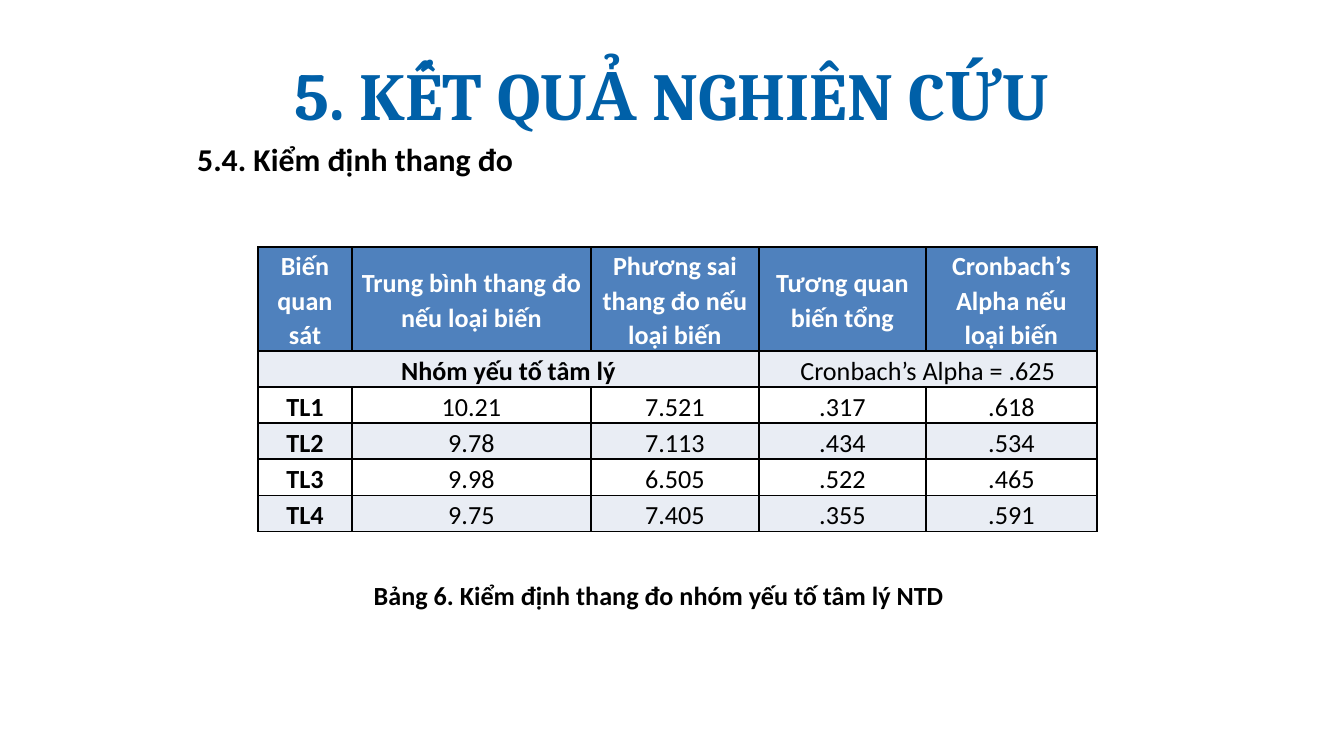
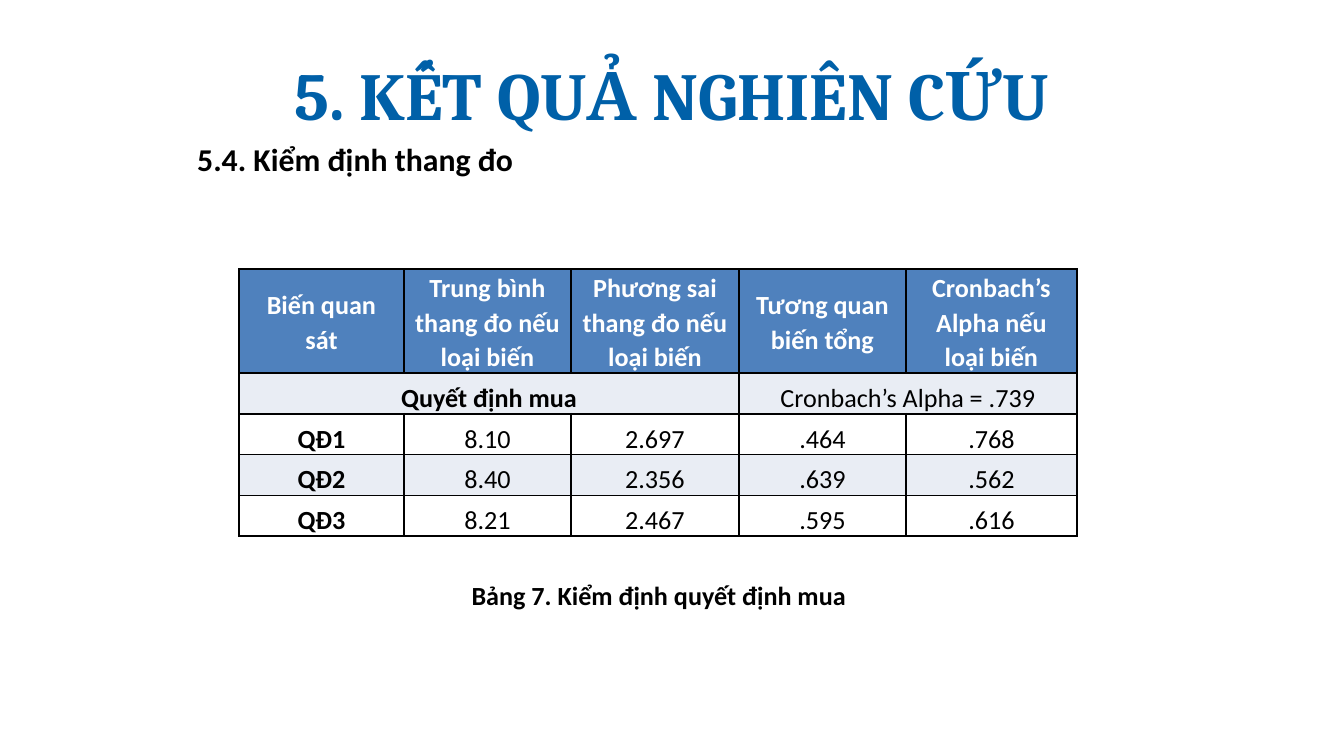
from lxml.etree import SubElement
from pptx import Presentation
from pptx.dml.color import RGBColor
from pptx.enum.text import MSO_ANCHOR, MSO_AUTO_SIZE, PP_ALIGN
from pptx.oxml.ns import qn
from pptx.util import Emu, Pt

SCALE = 914400 / 134.4
WIDE, HIGH = 1344, 756

BLUE = RGBColor(0x00, 0x60, 0xA8)
HEAD = RGBColor(0x4F, 0x81, 0xBD)
BAND = RGBColor(0xE9, 0xED, 0xF4)
WHITE = RGBColor(0xFF, 0xFF, 0xFF)
BLACK = RGBColor(0x00, 0x00, 0x00)

# Shared formats and wording
TITLE = {"name": "Cambria", "size": Pt(36), "bold": True}
SUB = {"name": "Calibri", "size": Pt(17), "bold": True}
BODY = {"name": "Calibri", "size": Pt(14), "bold": True}
HEADS = ["Biến quan sát", "Trung bình thang đo nếu loại biến",
         "Phương sai thang đo nếu loại biến", "Tương quan biến tổng",
         "Cronbach’s Alpha nếu loại biến"]

TABLES = [
    {"note": "Bảng 6. Kiểm định thang đo nhóm yếu tố tâm lý NTD",
     "left": 258, "top": 247, "cols": [94, 239, 168, 167, 171],
     "row": 36, "space": 1.15,
     "group": "Nhóm yếu tố tâm lý", "alpha": "Cronbach’s Alpha = .625",
     "data": [["TL1", "10.21", "7.521", ".317", ".618"],
              ["TL2", "9.78", "7.113", ".434", ".534"],
              ["TL3", "9.98", "6.505", ".522", ".465"],
              ["TL4", "9.75", "7.405", ".355", ".591"]]},
    {"note": "Bảng 7. Kiểm định quyết định mua",
     "left": 239, "top": 269, "cols": [165, 167, 168, 167, 171],
     "row": 40, "space": 1.3,
     "group": "Quyết định mua", "alpha": "Cronbach’s Alpha = .739",
     "data": [["QĐ1", "8.10", "2.697", ".464", ".768"],
              ["QĐ2", "8.40", "2.356", ".639", ".562"],
              ["QĐ3", "8.21", "2.467", ".595", ".616"]]},
]
HEAD_ROW = 104


def px(n):
    return Emu(round(n * SCALE))


def write(frame, text, style, color, align):
    para = frame.paragraphs[0]
    para.alignment = align
    run = para.add_run()
    run.text = text
    for key, value in style.items():
        setattr(run.font, key, value)
    run.font.color.rgb = color
    return para


def add_title(slide, text):
    shape = slide.shapes.title
    box = {"left": 67, "top": 31, "width": 1210, "height": 126}
    for key, value in box.items():
        setattr(shape, key, px(value))
    shape.text_frame.vertical_anchor = MSO_ANCHOR.MIDDLE
    write(shape.text_frame, text, TITLE, BLUE, PP_ALIGN.CENTER)


def add_label(slide, text, box, style, align):
    frame = slide.shapes.add_textbox(*map(px, box)).text_frame
    frame.word_wrap = True
    frame.auto_size = MSO_AUTO_SIZE.SHAPE_TO_FIT_TEXT
    write(frame, text, style, BLACK, align)


def add_edges(cell):
    props = cell._tc.get_or_add_tcPr()
    for side in ("lnL", "lnR", "lnT", "lnB"):
        line = SubElement(props, qn(f"a:{side}"), w=str(Pt(1)))
        fill = SubElement(line, qn("a:solidFill"))
        SubElement(fill, qn("a:srgbClr"), val=str(BLACK))


def fill_cell(cell, text, fill, color, bold, space):
    add_edges(cell)
    cell.fill.solid()
    cell.fill.fore_color.rgb = fill
    cell.vertical_anchor = MSO_ANCHOR.MIDDLE
    cell.margin_left = cell.margin_right = px(9)
    cell.margin_top = cell.margin_bottom = 0
    style = {**BODY, "bold": bold}
    if text:
        para = write(cell.text_frame, text, style, color, PP_ALIGN.CENTER)
    else:
        para = cell.text_frame.paragraphs[0]
        para.font.size = BODY["size"]
    para.line_spacing = space


def add_grid(slide, info):
    group = [info["group"], "", "", info["alpha"], ""]
    rows = [HEADS, group, *info["data"]]
    cols = info["cols"]
    highs = [HEAD_ROW] + [info["row"]] * (len(rows) - 1)
    box = info["left"], info["top"], sum(cols), sum(highs)
    table = slide.shapes.add_table(len(rows), len(cols), *map(px, box)).table
    table.first_row = table.horz_banding = False
    for col, width in zip(table.columns, cols):
        col.width = px(width)
    for row, high in zip(table.rows, highs):
        row.height = px(high)

    # Header, then light and white rows in turn
    for r, row in enumerate(rows):
        top = r == 0
        fill = HEAD if top else BAND if r % 2 else WHITE
        for c, text in enumerate(row):
            fill_cell(table.cell(r, c), text, fill, WHITE if top else BLACK,
                      top or c == 0, 1.1 if top else info["space"])

    # Group row: name over three columns, alpha over two
    for first, last in ((0, 2), (3, 4)):
        table.cell(1, first).merge(table.cell(1, last))


def main():
    deck = Presentation()
    deck.slide_width, deck.slide_height = px(WIDE), px(HIGH)
    for info in TABLES:
        slide = deck.slides.add_slide(deck.slide_layouts[5])
        add_title(slide, "5. KẾT QUẢ NGHIÊN CỨU")
        add_label(slide, "5.4. Kiểm định thang đo", (184, 133, 985, 52),
                  SUB, PP_ALIGN.LEFT)
        add_label(slide, info["note"], (323, 573, 672, 46),
                  BODY, PP_ALIGN.CENTER)
        add_grid(slide, info)
    deck.save("out.pptx")


if __name__ == "__main__":
    main()
